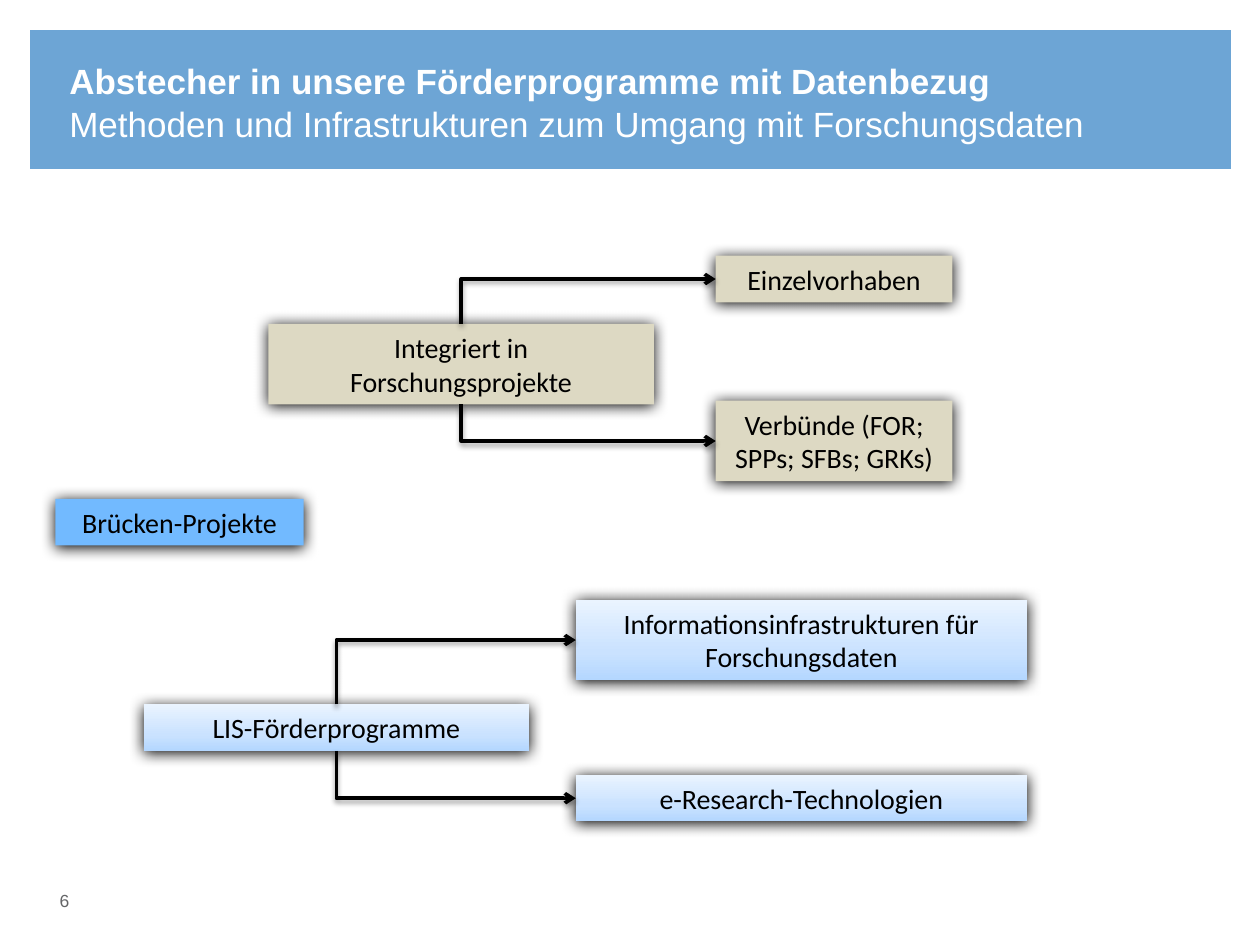
from lxml import etree
from pptx import Presentation
from pptx.dml.color import RGBColor
from pptx.enum.shapes import MSO_CONNECTOR, MSO_SHAPE
from pptx.enum.text import MSO_ANCHOR, MSO_AUTO_SIZE, PP_ALIGN
from pptx.oxml.ns import qn
from pptx.util import Inches, Pt

RECT, ELBOW = MSO_SHAPE.RECTANGLE, MSO_CONNECTOR.ELBOW
LEFT, CENTER, RIGHT = PP_ALIGN.LEFT, PP_ALIGN.CENTER, PP_ALIGN.RIGHT
MIDDLE, GROW = MSO_ANCHOR.MIDDLE, MSO_AUTO_SIZE.SHAPE_TO_FIT_TEXT
TOP_SITE, LEFT_SITE, LOW_SITE = 0, 1, 2

THEME = {
    "band": "6DA5D5", "title": "FFFFFF", "page": "646567", "ink": "000000",
    "sand": "DDD9C3", "sky": "72BAFF",
    "ice": [(0, "B4D7FF"), (35, "CAE2FF"), (100, "EAF4FF")],
    "head": "Arial", "body": "Calibri",
    "title_pt": 20, "box_pt": 16, "page_pt": 10, "line_pt": 2,
    # opacity in percent, blur and distance in points
    "box_shade": (100, 8.5, 1), "line_shade": (38, 3.1, 1.6),
}

BAND = (0.24, 0.24, 9.53, 1.1)
TITLES = [
    ("Abstecher in unsere Förderprogramme mit Datenbezug", 0.47, True),
    ("Methoden und Infrastrukturen zum Umgang mit Forschungsdaten", 0.81, False),
]
PAGE = ("6", (0.12, 7.06, 0.43, 0.27))
ROOT = ("Brücken-Projekte", (0.44, 3.96, 1.97, 0.37))

# Each branch: fill, parent box, upper child, lower child
BRANCHES = [
    ("sand",
     ("Integriert in Forschungsprojekte", (2.13, 2.57, 3.06, 0.64)),
     ("Einzelvorhaben", (5.68, 2.03, 1.88, 0.37)),
     ("Verbünde (FOR; SPPs; SFBs; GRKs)", (5.68, 3.18, 1.88, 0.64))),
    ("ice",
     ("LIS-Förderprogramme", (1.14, 5.59, 3.06, 0.37)),
     ("Informationsinfrastrukturen für Forschungsdaten",
      (4.57, 4.76, 3.58, 0.64)),
     ("e-Research-Technologien", (4.57, 6.15, 3.58, 0.37))),
]


def color(key):
    return RGBColor.from_string(THEME[key])


def write(frame, text, font, size, ink, align, bold=False):
    frame.word_wrap = True
    frame.text = text
    para = frame.paragraphs[0]
    para.alignment = align
    run = para.runs[0].font
    run.name, run.size, run.bold = font, Pt(size), bold
    run.color.rgb = color(ink)


def add_label(slide, text, place, size, ink, align, bold=False):
    frame = slide.shapes.add_textbox(*map(Inches, place)).text_frame
    frame.margin_left = frame.margin_right = 0
    frame.margin_top = frame.margin_bottom = 0
    write(frame, text, THEME["head"], size, ink, align, bold)


def shade(shape, opacity, blur, dist):
    """Give a shape or connector a black shadow that falls straight down."""
    effects = etree.SubElement(shape.element.spPr, qn("a:effectLst"))
    outer = etree.SubElement(
        effects, qn("a:outerShdw"), blurRad=str(Pt(blur)), dist=str(Pt(dist)),
        dir="5400000", rotWithShape="0")
    ink = etree.SubElement(outer, qn("a:srgbClr"), val=THEME["ink"])
    etree.SubElement(ink, qn("a:alpha"), val=str(opacity * 1000))


def paint(shape, key):
    """Fill with one colour, or with gradient stops that run upwards."""
    fill, value = shape.fill, THEME[key]
    if isinstance(value, str):
        fill.solid()
        fill.fore_color.rgb = color(key)
        return
    fill.gradient()
    fill.gradient_angle = 90
    stops = shape.element.spPr.find(".//" + qn("a:gsLst"))
    for old in list(stops):
        stops.remove(old)
    for pos, tint in value:
        stop = etree.SubElement(stops, qn("a:gs"), pos=str(pos * 1000))
        etree.SubElement(stop, qn("a:srgbClr"), val=tint)


def add_rect(slide, place, key):
    rect = slide.shapes.add_shape(RECT, *map(Inches, place))
    paint(rect, key)
    rect.line.fill.background()
    return rect


def add_box(slide, text, place, key):
    box = add_rect(slide, place, key)
    shade(box, *THEME["box_shade"])
    frame = box.text_frame
    write(frame, text, THEME["body"], THEME["box_pt"], "ink", CENTER)
    frame.auto_size, frame.vertical_anchor = GROW, MIDDLE
    return box


def add_link(slide, parent, child, up):
    """Draw an arrow that leaves the parent vertically, then turns right."""
    x1 = parent.left + parent.width // 2
    y1 = parent.top if up else parent.top + parent.height
    x2, y2 = child.left, child.top + child.height // 2
    link = slide.shapes.add_connector(ELBOW, x1, y1, x2, y2)
    link.begin_connect(parent, TOP_SITE if up else LOW_SITE)
    link.end_connect(child, LEFT_SITE)

    # The one-bend preset runs across first, so it is turned and mirrored
    wide, high = x2 - x1, abs(y2 - y1)
    link.left = (x1 + x2 - high) // 2
    link.top = (y1 + y2 - wide) // 2
    link.width, link.height = high, wide
    props = link.element.spPr
    frame = props.find(qn("a:xfrm"))
    frame.set("rot", "5400000" if up else "16200000")
    frame.set("flipH", "1")
    frame.set("flipV", "1" if up else "0")
    props.find(qn("a:prstGeom")).set("prst", "bentConnector2")

    link.line.color.rgb = color("ink")
    link.line.width = Pt(THEME["line_pt"])
    etree.SubElement(props.find(qn("a:ln")), qn("a:tailEnd"), type="arrow")
    shade(link, *THEME["line_shade"])


def main():
    deck = Presentation()
    deck.slide_width, deck.slide_height = Inches(10), Inches(7.5)
    slide = deck.slides.add_slide(deck.slide_layouts[6])

    add_rect(slide, BAND, "band").shadow.inherit = False
    add_label(slide, *PAGE, THEME["page_pt"], "page", RIGHT)

    trees = [[add_box(slide, *node, key) for node in nodes]
             for key, *nodes in BRANCHES]
    for parent, upper, lower in trees:
        add_link(slide, parent, upper, True)
        add_link(slide, parent, lower, False)

    for text, top, bold in TITLES:
        add_label(slide, text, (0.55, top, 8.66, 0.3),
                  THEME["title_pt"], "title", LEFT, bold)
    add_box(slide, *ROOT, "sky")
    deck.save("out.pptx")


if __name__ == "__main__":
    main()
